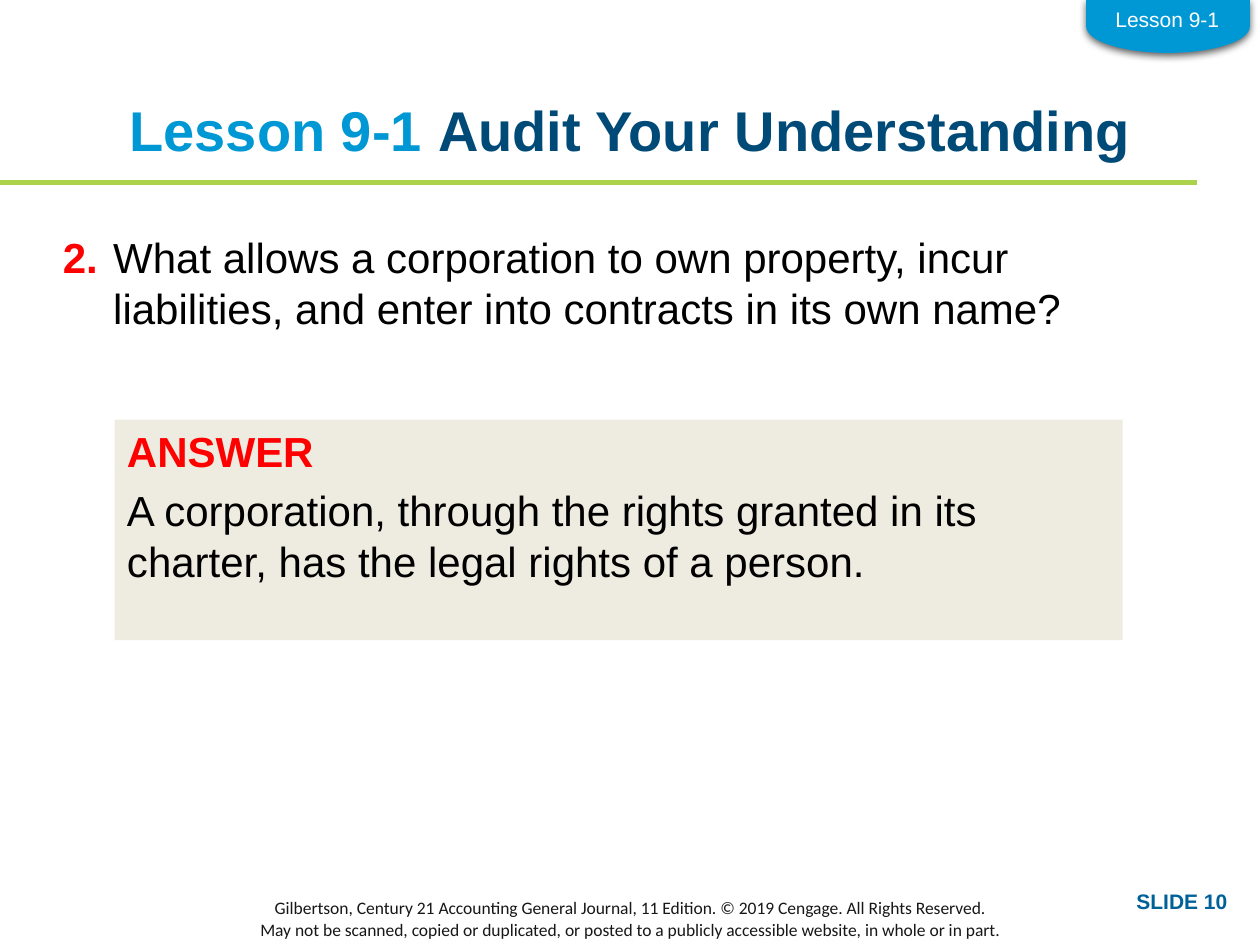
import pptx
import pptx.dml.color
import pptx.enum.shapes
import pptx.enum.text
import pptx.oxml
import pptx.oxml.ns
import pptx.util
from dataclasses import dataclass

Inches = pptx.util.Inches
Pt = pptx.util.Pt
ALIGN = pptx.enum.text.PP_ALIGN
ANCHOR = pptx.enum.text.MSO_ANCHOR
SHAPE = pptx.enum.shapes.MSO_SHAPE


@dataclass(frozen=True)
class Theme:
    sky: str = "0098D4"
    navy: str = "004A78"
    blue: str = "006198"
    green: str = "AAD24B"
    red: str = "FF0000"
    beige: str = "EEECE1"
    black: str = "000000"
    ink: str = "181717"
    white: str = "FFFFFF"
    title: int = 32
    body: int = 24
    label: int = 12
    notice: int = 10
    font: str = "Arial"
    notice_font: str = "Calibri"


THEME = Theme()


def rgb(value):
    return pptx.dml.color.RGBColor.from_string(value)


def set_all(target, values):
    for name, value in values.items():
        setattr(target, name, value)


def write(frame, paragraphs, size, font=THEME.font, hanging=None, **layout):
    """Fill a frame; each paragraph is a list of (text, colour, bold) runs."""
    for index, runs in enumerate(paragraphs):
        paragraph = frame.paragraphs[0] if index == 0 else frame.add_paragraph()
        if hanging:
            props = paragraph._p.get_or_add_pPr()
            props.set("marL", str(hanging))
            props.set("indent", str(-hanging))
        set_all(paragraph, {"alignment": ALIGN.LEFT, **layout})
        if index == 0:
            paragraph.space_before = Pt(0)
        for text, colour, bold in runs:
            run = paragraph.add_run()
            run.text = text
            set_all(run.font, {"name": font, "size": Pt(size), "bold": bold})
            run.font.color.rgb = rgb(colour)


def add_text(slide, box, paragraphs, size, frame_format=None, **layout):
    frame = slide.shapes.add_textbox(*map(Inches, box)).text_frame
    set_all(frame, {"word_wrap": True, **(frame_format or {})})
    write(frame, paragraphs, size, **layout)


def add_block(slide, kind, box, colour):
    block = slide.shapes.add_shape(kind, *map(Inches, box))
    block.shadow.inherit = False
    block.fill.solid()
    block.fill.fore_color.rgb = rgb(colour)
    block.line.fill.background()
    return block


def add_rule(slide, left, right, y):
    rule = slide.shapes.add_connector(
        pptx.enum.shapes.MSO_CONNECTOR.STRAIGHT,
        Inches(left), Inches(y), Inches(right), Inches(y))
    rule.line.color.rgb = rgb(THEME.green)
    rule.line.width = Pt(3)
    rule._element.spPr.append(pptx.oxml.parse_xml(
        f'<a:effectLst {pptx.oxml.ns.nsdecls("a")}/>'))


def add_shadow(shape, blur, distance, opacity):
    effects = shape._element.spPr.find(pptx.oxml.ns.qn("a:effectLst"))
    effects.append(pptx.oxml.parse_xml(
        f'<a:outerShdw {pptx.oxml.ns.nsdecls("a")} blurRad="{Pt(blur)}" '
        f'dist="{Pt(distance)}" dir="5400000" rotWithShape="0">'
        f'<a:srgbClr val="{THEME.black}"><a:alpha val="{opacity * 1000}"/>'
        f'</a:srgbClr></a:outerShdw>'))


def main():
    deck = pptx.Presentation()
    set_all(deck, {"slide_width": Inches(10), "slide_height": Inches(7.5)})
    slide = deck.slides.add_slide(deck.slide_layouts[6])

    # Green rule and copyright notice
    add_rule(slide, 0, 9.5, 1.45)
    notice = (
        "Gilbertson, Century 21 Accounting General Journal, 11 Edition. "
        "© 2019 Cengage. All Rights Reserved.",
        "May not be scanned, copied or duplicated, or posted to a publicly "
        "accessible website, in whole or in part.")
    add_text(slide, (0, 7.14, 10, 0.3),
             [[(line, THEME.ink, False)] for line in notice], THEME.notice,
             {"vertical_anchor": ANCHOR.MIDDLE},
             font=THEME.notice_font, alignment=ALIGN.CENTER)

    # Title
    no_margins = {f"margin_{side}": 0
                  for side in ("left", "top", "right", "bottom")}
    add_text(slide, (0.69, 0.76, 8.62, 0.74),
             [[("Lesson 9-1 ", THEME.sky, True),
               ("Audit Your Understanding", THEME.navy, True)]],
             THEME.title, no_margins, alignment=ALIGN.CENTER,
             space_after=Pt(6))

    # Question
    add_text(slide, (0.4, 1.79, 8.79, 1.12),
             [[("2.\t", THEME.red, True),
               ("What allows a corporation to own property, incur liabilities, "
                "and enter into contracts in its own name?",
                THEME.black, False)]],
             THEME.body, hanging=Inches(0.4), space_after=Pt(6))

    # Answer panel
    answer = add_block(slide, SHAPE.RECTANGLE, (0.91, 3.33, 8, 1.75),
                       THEME.beige)
    set_all(answer.text_frame,
            {"word_wrap": True, "vertical_anchor": ANCHOR.TOP})
    write(answer.text_frame,
          [[("ANSWER", THEME.red, True)],
           [("A corporation, through the rights granted in its charter, "
             "has the legal rights of a person.", THEME.black, False)]],
          THEME.body, space_before=Pt(5))

    # Slide number
    add_text(slide, (7.84, 7, 2, 0.3), [[("SLIDE 10", THEME.blue, True)]],
             THEME.label, alignment=ALIGN.RIGHT)

    # Lesson tab
    tab = add_block(slide, SHAPE.FLOWCHART_DELAY, (9.06, -0.44, 0.42, 1.3),
                    THEME.sky)
    tab.rotation = 90
    add_shadow(tab, blur=4.5, distance=1.5, opacity=63)
    add_text(slide, (8.75, 0, 1.03, 0.3),
             [[("Lesson 9-1", THEME.white, False)]], THEME.label,
             {"word_wrap": False,
              "auto_size": pptx.enum.text.MSO_AUTO_SIZE.SHAPE_TO_FIT_TEXT},
             alignment=ALIGN.CENTER)

    deck.save("out.pptx")


if __name__ == "__main__":
    main()
